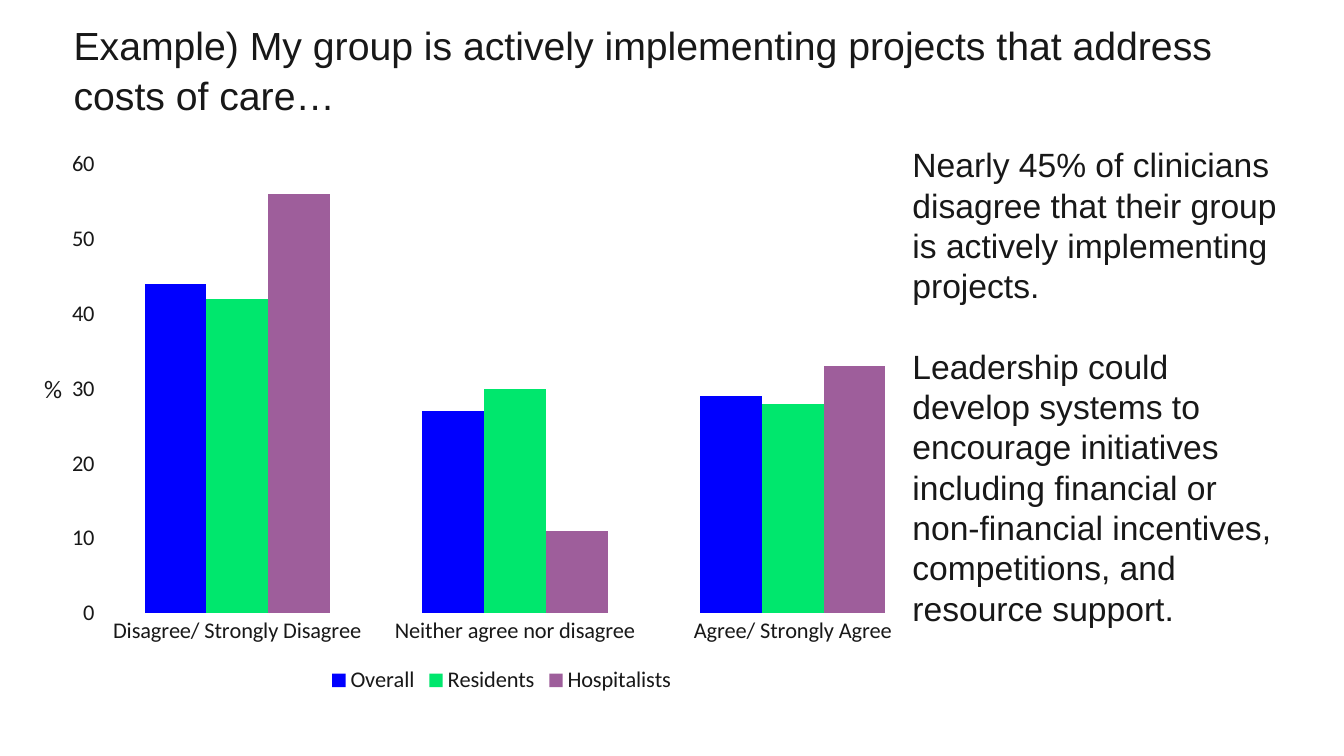
from pptx import Presentation
from pptx.chart.data import CategoryChartData
from pptx.dml.color import RGBColor
from pptx.enum.chart import XL_CHART_TYPE, XL_LEGEND_POSITION, XL_TICK_MARK
from pptx.enum.text import MSO_ANCHOR, MSO_AUTO_SIZE, PP_ALIGN
from pptx.oxml import parse_xml
from pptx.oxml.ns import nsdecls, qn
from pptx.util import Inches, Pt

WIDTH, HEIGHT = Inches(13.33), Inches(7.5)
COLORS = {
    "text": "181818",
    "Overall": "0000FF",
    "Residents": "00E76D",
    "Hospitalists": "9E5E9B",
}
CATEGORIES = [
    "Disagree/ Strongly Disagree",
    "Neither agree nor disagree",
    "Agree/ Strongly Agree",
]
RESPONSES = {
    "Overall": (44, 27, 29),
    "Residents": (42, 30, 28),
    "Hospitalists": (56, 11, 33),
}
TITLE_AREA = (4.73, 1.73, 91.37, 14.8)
CHART_AREA = (3.98, 18.4, 66.69, 74)
MESSAGE_AREA = (67.14, 18.4, 29.71, 66)
UNIT_AREA = (2.55, 48.67, 2.85, 5.33)
PLOT_SHARES = {"x": 0.05, "y": 0.045, "w": 0.93, "h": 0.803}


def place(area):
    left, top, width, height = area
    return (int(WIDTH * left / 100), int(HEIGHT * top / 100),
            int(WIDTH * width / 100), int(HEIGHT * height / 100))


def move(shape, area):
    shape.left, shape.top, shape.width, shape.height = place(area)


def color(name):
    return RGBColor.from_string(COLORS[name])


def format_font(font, size, name="Calibri"):
    font.size, font.name = Pt(size), name
    font.color.rgb = color("text")


def write(shape, texts, size, name="Arial", spacing=1.0, gap=0, wrap=True):
    frame = shape.text_frame
    frame.word_wrap = wrap
    frame.auto_size = MSO_AUTO_SIZE.NONE
    frame.vertical_anchor = MSO_ANCHOR.TOP
    for index, text in enumerate(texts):
        para = frame.add_paragraph() if index else frame.paragraphs[0]
        para.alignment = PP_ALIGN.LEFT
        para.line_spacing = spacing
        para.space_before = Pt(gap if index else 0)
        properties = para._p.get_or_add_pPr()
        properties.set("marL", "0")
        properties.set("indent", "0")
        properties.append(parse_xml(f"<a:buNone {nsdecls('a')}/>"))
        span = para.add_run()
        span.text = text
        format_font(span.font, size, name)


def format_axis(axis):
    axis.has_major_gridlines = False
    axis.major_tick_mark = axis.minor_tick_mark = XL_TICK_MARK.NONE
    axis.format.line.fill.background()
    format_font(axis.tick_labels.font, 16)


def fix_plot_area(chart):
    space = chart._chartSpace
    plot_area = space.find(".//" + qn("c:plotArea"))
    for layout in plot_area.findall(qn("c:layout")):
        plot_area.remove(layout)
    sizes = "".join(f'<c:{key} val="{share}"/>' for key, share in PLOT_SHARES.items())
    plot_area.insert(0, parse_xml(
        f"<c:layout {nsdecls('c')}><c:manualLayout>"
        '<c:layoutTarget val="inner"/><c:xMode val="edge"/><c:yMode val="edge"/>'
        f"{sizes}</c:manualLayout></c:layout>"))
    space.find(qn("c:chart")).addnext(parse_xml(
        f"<c:spPr {nsdecls('c', 'a')}><a:noFill/><a:ln><a:noFill/></a:ln></c:spPr>"))


def add_response_chart(page):
    data = CategoryChartData()
    data.categories = CATEGORIES
    for group, values in RESPONSES.items():
        data.add_series(group, values)
    chart = page.shapes.add_chart(
        XL_CHART_TYPE.COLUMN_CLUSTERED, *place(CHART_AREA), data).chart
    format_font(chart.font, 16)
    chart.has_title = False
    chart.has_legend = True
    chart.legend.position = XL_LEGEND_POSITION.BOTTOM
    chart.legend.include_in_layout = False
    format_font(chart.legend.font, 16)
    format_axis(chart.category_axis)
    format_axis(chart.value_axis)
    chart.value_axis.minimum_scale = 0
    chart.value_axis.maximum_scale = 60
    chart.value_axis.major_unit = 10
    plot = chart.plots[0]
    plot.vary_by_categories = False
    plot.gap_width, plot.overlap = 150, 0
    for series in plot.series:
        series.format.fill.solid()
        series.format.fill.fore_color.rgb = color(series.name)
    fix_plot_area(chart)


def main():
    deck = Presentation()
    deck.slide_width, deck.slide_height = WIDTH, HEIGHT
    page = deck.slides.add_slide(deck.slide_layouts[1])
    title, message = page.shapes.title, page.placeholders[1]
    move(title, TITLE_AREA)
    write(title, ["Example) My group is actively implementing projects "
                  "that address costs of care…"], 28, spacing=1.07)
    move(message, MESSAGE_AREA)
    write(message, [
        "Nearly 45% of clinicians disagree that their group is actively "
        "implementing projects.",
        "Leadership could develop systems to encourage initiatives including "
        "financial or non-financial incentives, competitions, and resource support.",
    ], 24, gap=28.8)
    add_response_chart(page)
    unit = page.shapes.add_textbox(*place(UNIT_AREA))
    write(unit, ["%"], 18, name="Calibri", wrap=False)
    deck.save("out.pptx")


if __name__ == "__main__":
    main()
